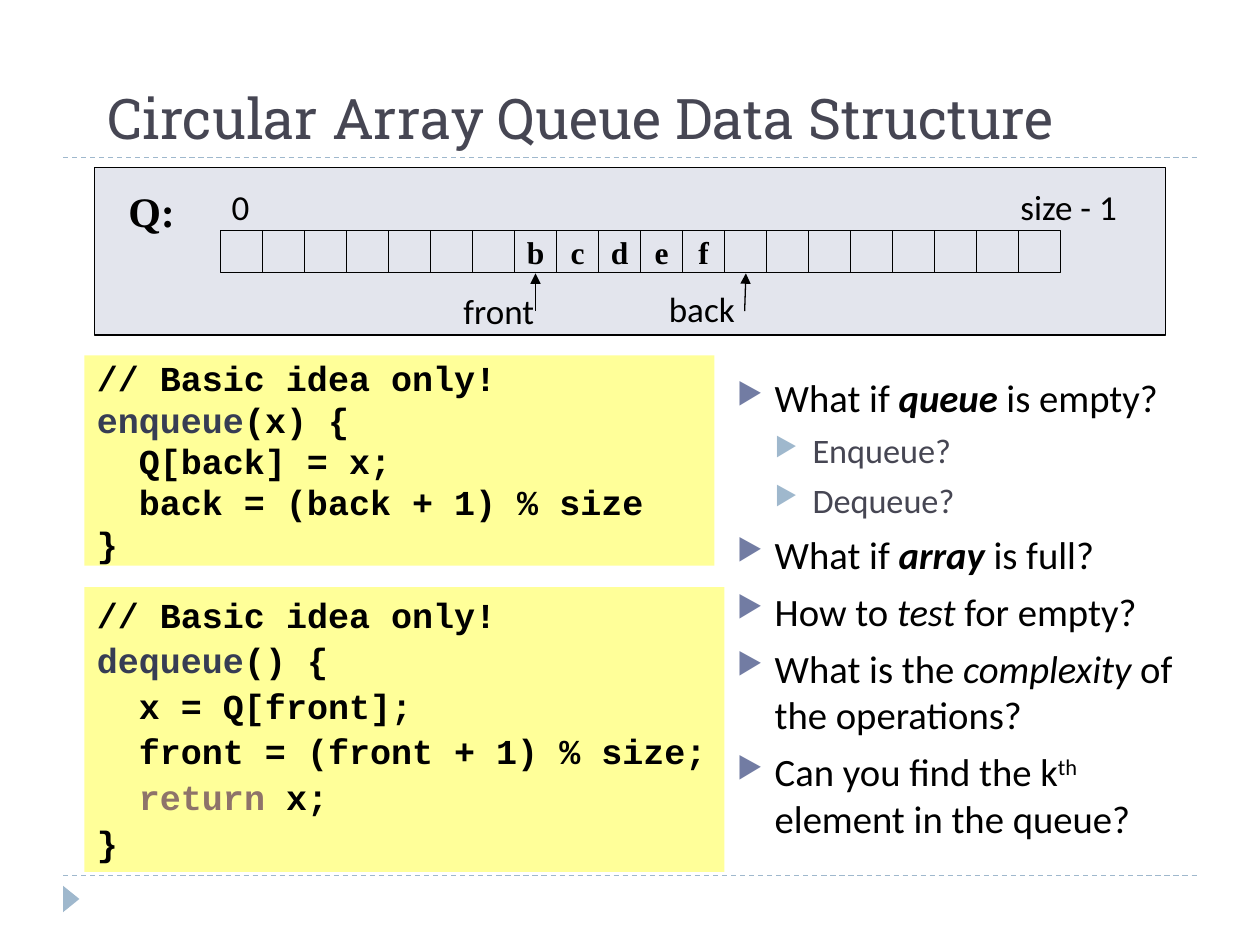
from pptx import Presentation
from pptx.dml.color import RGBColor
from pptx.enum.dml import MSO_LINE
from pptx.enum.shapes import MSO_CONNECTOR, MSO_SHAPE
from pptx.enum.text import MSO_ANCHOR, PP_ALIGN
from pptx.oxml.ns import qn
from pptx.util import Inches, Pt
from lxml.etree import SubElement


class Theme:
    ink, title, rule, mark = "000000", "464653", "9FB8CD", "727CA3"
    panel, code, name, key = "E3E5ED", "FFFF99", "373D54", "8E736A"
    head = dict(name="Roboto Slab", size=Pt(32))
    label = dict(name="Calibri", size=Pt(20))
    item = dict(name="Calibri", size=Pt(22.1))
    sub = dict(name="Calibri", size=Pt(19.6))
    mono = dict(name="Courier New", size=Pt(20), bold=True)
    cell = dict(name="Times New Roman", size=Pt(18), bold=True)
    tag = dict(name="Times New Roman", size=Pt(24), bold=True)


def write(para, text, style, color=Theme.ink, **more):
    run = para.add_run()
    run.text = text
    for key, value in {**style, **more}.items():
        setattr(run.font, key, value)
    run.font.color.rgb = RGBColor.from_string(color)
    return run


def draw(kind, box, fill=None, line=None):
    shape = slide.shapes.add_shape(kind, *map(Inches, box))
    shape.shadow.inherit = False
    if fill:
        shape.fill.solid()
        shape.fill.fore_color.rgb = RGBColor.from_string(fill)
    else:
        shape.fill.background()
    if line:
        shape.line.color.rgb = RGBColor.from_string(line)
        shape.line.width = Pt(0.75)
    else:
        shape.line.fill.background()
    return shape


deck = Presentation()
deck.slide_width, deck.slide_height = Inches(10), Inches(7.5)
slide = deck.slides.add_slide(deck.slide_layouts[5])

# Title
title = slide.shapes.title
title.left, title.top, title.width, title.height = map(Inches, (0.75, 0.25, 8.5, 1))
title.text_frame.vertical_anchor = MSO_ANCHOR.BOTTOM
para = title.text_frame.paragraphs[0]
para.alignment = PP_ALIGN.LEFT
write(para, "Circular Array Queue Data Structure", Theme.head, Theme.title)

# Corner mark and queue panel
draw(MSO_SHAPE.ISOSCELES_TRIANGLE, (0.46, 7.07, 0.21, 0.13), Theme.rule).rotation = 90
draw(MSO_SHAPE.RECTANGLE, (0.75, 1.33, 8.5, 1.33), Theme.panel, Theme.ink)

# Array cells
side = 1 / 3
for i, char in enumerate("bcdef".rjust(12).ljust(20)):
    cell = draw(MSO_SHAPE.RECTANGLE, (1.75 + i * side, 1.83, side, side), line=Theme.ink)
    if char != " ":
        frame = cell.text_frame
        frame.word_wrap = False
        frame.vertical_anchor = MSO_ANCHOR.MIDDLE
        frame.paragraphs[0].alignment = PP_ALIGN.CENTER
        write(frame.paragraphs[0], char, Theme.cell)

# Array labels
for text, box, style in (
    ("Q:", (0.92, 1.42, 0.58, 0.5), Theme.tag),
    ("0", (1.74, 1.42, 0.36, 0.44), Theme.label),
    ("size - 1", (8, 1.42, 1.13, 0.44), Theme.label),
    ("front", (3.58, 2.25, 0.76, 0.44), Theme.label),
    ("back", (5.21, 2.23, 0.79, 0.44), Theme.label),
):
    frame = slide.shapes.add_textbox(*map(Inches, box)).text_frame
    frame.word_wrap = False
    write(frame.paragraphs[0], text, style)

# Dashed rules and index arrows
for ends, color, arrow in (
    ((0.5, 1.25, 9.5, 1.25), Theme.rule, False),
    ((0.5, 6.95, 9.5, 6.95), Theme.rule, False),
    ((4.25, 2.47, 4.25, 2.17), Theme.ink, True),
    ((5.91, 2.47, 5.92, 2.17), Theme.ink, True),
):
    link = slide.shapes.add_connector(MSO_CONNECTOR.STRAIGHT, *map(Inches, ends))
    link.line.color.rgb = RGBColor.from_string(color)
    link.line.width = Pt(0.75)
    if arrow:
        SubElement(link.line._get_or_add_ln(), qn("a:tailEnd"), type="triangle")
    else:
        link.line.dash_style = MSO_LINE.DASH
    SubElement(link._element.spPr, qn("a:effectLst"))

# Code blocks
note = [("// Basic idea only!", Theme.ink)]
push = [
    note,
    [("enqueue", Theme.name), ("(x) {", Theme.ink)],
    [("  Q[back] = x;", Theme.ink)],
    [("  back = (back + 1) % size", Theme.ink)],
    [("}", Theme.ink)],
]
pull = [
    note,
    [("dequeue", Theme.name), ("() {", Theme.ink)],
    [("  x = Q[front];", Theme.ink)],
    [("  front = (front + 1) % size;", Theme.ink)],
    [("  ", Theme.ink), ("return", Theme.key), (" x;", Theme.ink)],
    [("}", Theme.ink)],
]
for box, lines, pitch in (
    ((0.67, 2.82, 5, 1.67), push, 0.9),
    ((0.67, 4.66, 5.08, 2.26), pull, 1.0),
):
    frame = draw(MSO_SHAPE.RECTANGLE, box, Theme.code).text_frame
    frame.word_wrap = True
    frame.vertical_anchor = MSO_ANCHOR.TOP
    for i, line in enumerate(lines):
        para = frame.add_paragraph() if i else frame.paragraphs[0]
        para.alignment = PP_ALIGN.LEFT
        para.line_spacing = pitch
        para.space_before = Pt(2)
        for text, color in line:
            write(para, text, Theme.mono, color)

# Questions
strong, slant, plain = dict(bold=True, italic=True), dict(italic=True), {}
asks = [
    (0, [("What if ", plain), ("queue", strong), (" is empty?", plain)]),
    (1, [("Enqueue?", plain)]),
    (1, [("Dequeue?", plain)]),
    (0, [("What if ", plain), ("array", strong), (" is full?", plain)]),
    (0, [("How to ", plain), ("test", slant), (" for empty?", plain)]),
    (0, [("What is the ", plain), ("complexity", slant), (" of the operations?", plain)]),
    (0, [("Can you find the k", plain), ("th", None), (" element in the queue?", plain)]),
]
looks = [(Theme.item, Theme.ink, Theme.mark, 6), (Theme.sub, Theme.title, Theme.rule, 5)]
frame = slide.shapes.add_textbox(*map(Inches, (5.75, 2.92, 3.92, 3.92))).text_frame
frame.word_wrap = True
for i, (level, parts) in enumerate(asks):
    style, color, mark, gap = looks[level]
    para = frame.add_paragraph() if i else frame.paragraphs[0]
    para.level = level
    para.space_before = Pt(gap)
    props = para._p.get_or_add_pPr()
    props.set("marL", str(Inches(0.3 * (level + 1))))
    props.set("indent", str(Inches(-0.3)))
    SubElement(SubElement(props, qn("a:buClr")), qn("a:srgbClr"), val=mark)
    SubElement(props, qn("a:buSzPct"), val="76000")
    SubElement(props, qn("a:buChar"), char="▶")
    for text, more in parts:
        run = write(para, text, style, color, **(more or {}))
        if more is None:
            run.font._element.set("baseline", "30000")

deck.save("out.pptx")
